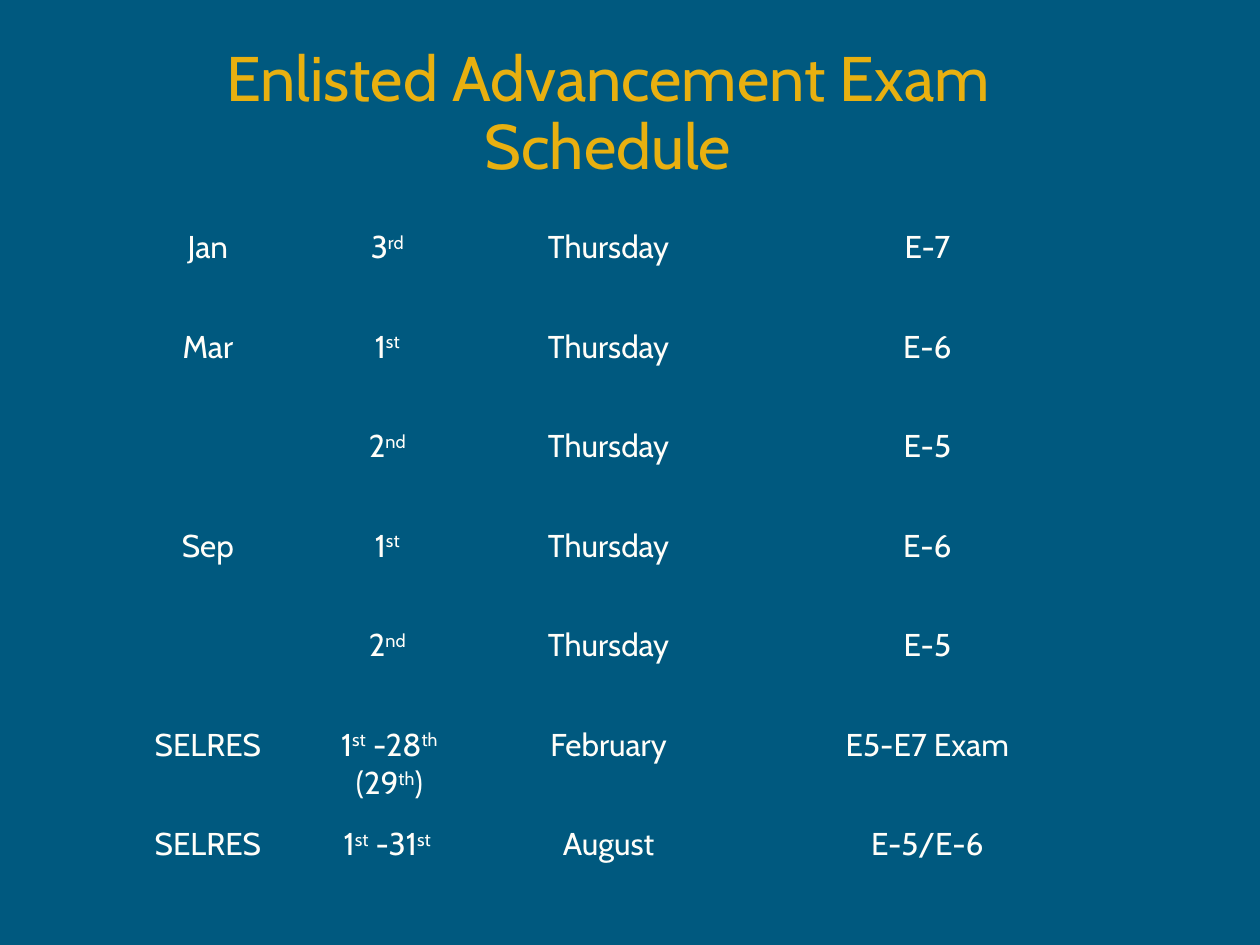
"""Build the enlisted advancement exam schedule slide."""
from dataclasses import dataclass

from pptx import Presentation
from pptx.dml.color import RGBColor
from pptx.enum.text import MSO_ANCHOR, PP_ALIGN
from pptx.util import Emu, Pt

CENTER = PP_ALIGN.CENTER
TOP, MIDDLE = MSO_ANCHOR.TOP, MSO_ANCHOR.MIDDLE
PX = 9144
NO_STYLE = "{2D5ABB26-0587-4C30-8999-92F81FD0307C}"


@dataclass(frozen=True)
class Theme:
    font: str = "Cabin"
    background: str = "00597F"
    title: str = "E8B010"
    text: str = "FFFEF9"
    title_size: int = 36
    text_size: int = 18


@dataclass(frozen=True)
class Exam:
    month: str
    date: str
    day: str
    grade: str


THEME = Theme()
COL_WIDTHS = (158, 130, 218, 288)
ROW_HEIGHT = 79
EXAMS = (
    Exam("Jan", "3^rd ^", "Thursday", "E-7"),
    Exam("Mar", "1^st ^", "Thursday", "E-6"),
    Exam("", "2^nd ^", "Thursday", "E-5"),
    Exam("Sep", "1^st ^", "Thursday", "E-6"),
    Exam("", "2^nd ^", "Thursday", "E-5"),
    Exam("SELRES", "1^st^ -28^th^ (29^th^)", "February", "E5-E7 Exam"),
    Exam("SELRES", "1^st^ -31^st ^", "August", "E-5/E-6"),
)


def px(n: int) -> Emu:
    """Convert px, at 100 to the inch, to EMU."""
    return Emu(n * PX)


def write(tf, text: str, *, size: int, color: str, spacing: float = 1.0) -> None:
    """Write centred text, raising each part enclosed in carets."""
    p = tf.paragraphs[0]
    p.alignment = CENTER
    p.line_spacing = spacing
    p.font.size = Pt(size)
    for i, part in enumerate(text.split("^")):
        if not part:
            continue
        r = p.add_run()
        r.text = part
        r.font.name = THEME.font
        r.font.size = Pt(size)
        r.font.color.rgb = RGBColor.from_string(color)
        if i % 2:
            r._r.get_or_add_rPr().set("baseline", "30000")


def add_title(s, text: str) -> None:
    """Add the slide title."""
    sp = s.shapes.add_textbox(px(122), px(19), px(721), px(145))
    tf = sp.text_frame
    tf.word_wrap = True
    tf.vertical_anchor = MIDDLE
    write(tf, text, size=THEME.title_size, color=THEME.title, spacing=0.9)


def add_schedule(s, exams: tuple[Exam, ...]) -> None:
    """Add the table with one row for each exam."""
    frame = s.shapes.add_table(
        len(exams), len(COL_WIDTHS), px(86), px(176),
        px(sum(COL_WIDTHS)), px(ROW_HEIGHT * len(exams)))
    table = frame.table
    table.first_row = table.horz_banding = False
    table._tbl.tblPr[0].text = NO_STYLE
    for col, width in zip(table.columns, COL_WIDTHS):
        col.width = px(width)
    for row, exam in zip(table.rows, exams):
        row.height = px(ROW_HEIGHT)
        values = (exam.month, exam.date, exam.day, exam.grade)
        for cell, value in zip(row.cells, values):
            cell.fill.background()
            cell.vertical_anchor = TOP
            write(cell.text_frame, value, size=THEME.text_size, color=THEME.text)


def main() -> None:
    """Build and save the slide."""
    prs = Presentation()
    prs.slide_width, prs.slide_height = px(1000), px(750)
    s = prs.slides.add_slide(prs.slide_layouts[6])
    fill = s.background.fill
    fill.solid()
    fill.fore_color.rgb = RGBColor.from_string(THEME.background)
    add_title(s, "Enlisted Advancement Exam Schedule")
    add_schedule(s, EXAMS)
    prs.save("out.pptx")


if __name__ == "__main__":
    main()
